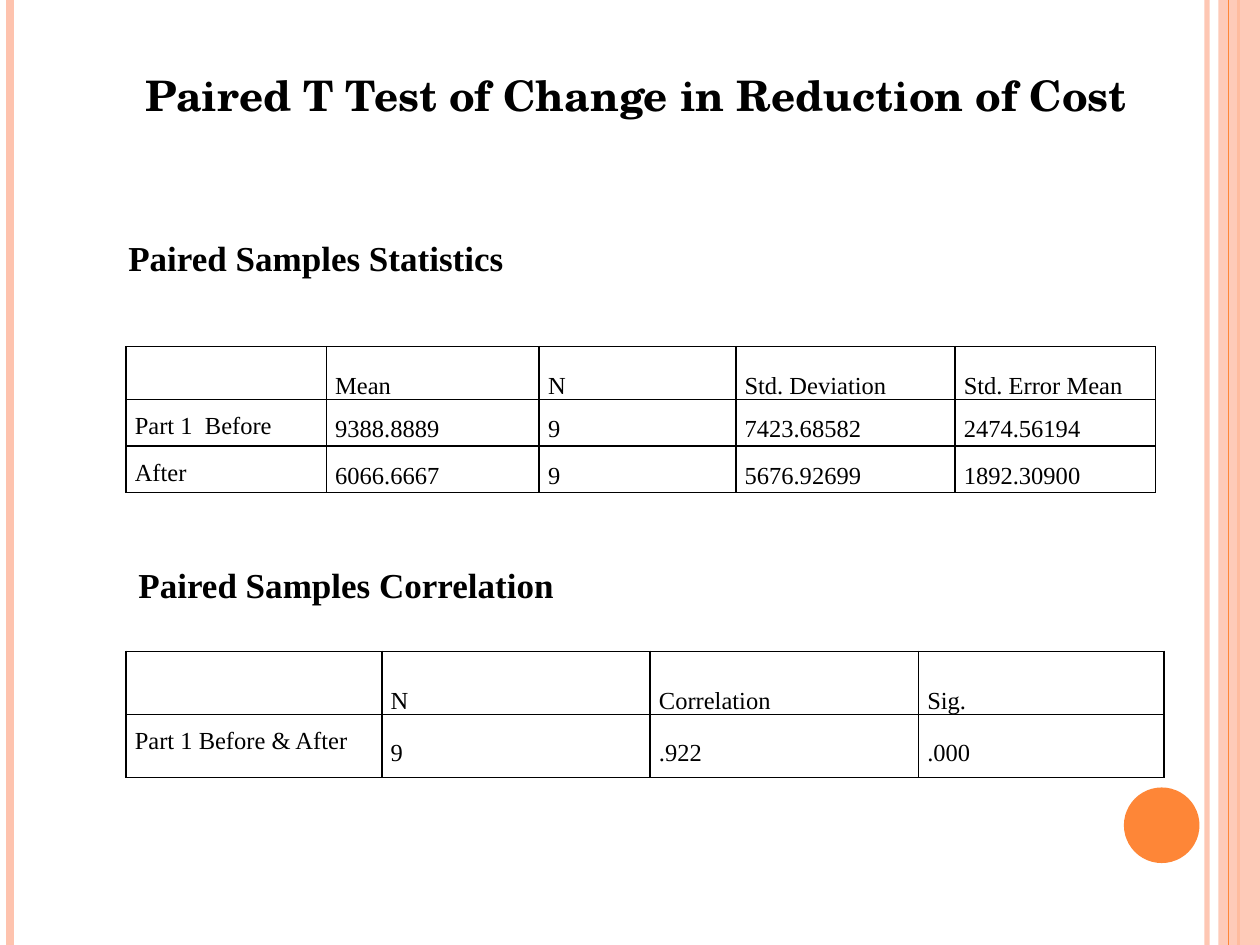
from typing import NamedTuple

from lxml.etree import SubElement
from pptx import Presentation
from pptx.dml.color import RGBColor
from pptx.enum.shapes import MSO_CONNECTOR, MSO_SHAPE
from pptx.enum.text import MSO_ANCHOR, MSO_AUTO_SIZE, PP_ALIGN
from pptx.oxml.ns import qn
from pptx.util import Inches, Pt

BLACK = RGBColor(0x00, 0x00, 0x00)
PEACH = RGBColor(0xFE, 0xC3, 0xAE)
ORANGE = RGBColor(0xFE, 0x86, 0x37)
SERIF = "Times New Roman"
PAGE_HEIGHT = 7.5


class Stripe(NamedTuple):
    x: float
    color: RGBColor
    weight: float
    opacity: int = 100


class Block(NamedTuple):
    shape: MSO_SHAPE
    box: tuple[float, float, float, float]
    color: RGBColor
    opacity: int = 100


class Heading(NamedTuple):
    text: str
    box: tuple[float, float, float, float]
    size: int = 20
    font: str = SERIF
    align: PP_ALIGN = PP_ALIGN.LEFT


class Grid(NamedTuple):
    left: float
    top: float
    widths: list[float]
    heights: list[float]
    rows: list[list[str]]


STRIPES_BEHIND = [
    Stripe(9.58, PEACH, 3, 93),
    Stripe(0.08, PEACH, 4.5),
    Stripe(9.83, ORANGE, 1.5),
]
SIDE_BAND = Block(MSO_SHAPE.RECTANGLE, (9.67, 0, 0.33, PAGE_HEIGHT), PEACH, 87)
STRIPE_ON_BAND = Stripe(9.75, ORANGE, 0.75)
CORNER_DISC = Block(MSO_SHAPE.OVAL, (8.92, 6.25, 0.6, 0.6), ORANGE)

HEADINGS = [
    Heading("Paired T Test of Change in Reduction of Cost", (0.67, 0.5, 8.75, 0.5),
            24, "TeX Gyre Schola", PP_ALIGN.CENTER),
    Heading("Paired Samples Statistics", (0.92, 1.83, 5, 0.44)),
    Heading("Paired Samples Correlation", (1, 4.42, 4.92, 0.44)),
]

GRIDS = [
    Grid(1, 2.75, [1.59, 1.69, 1.56, 1.74, 1.59], [0.42, 0.37, 0.37], [
        ["", "Mean", "N", "Std. Deviation", "Std. Error Mean"],
        ["Part 1  Before", "9388.8889", "9", "7423.68582", "2474.56194"],
        ["After", "6066.6667", "9", "5676.92699", "1892.30900"],
    ]),
    Grid(1, 5.17, [2.03, 2.13, 2.13, 1.95], [0.5, 0.5], [
        ["", "N", "Correlation", "Sig."],
        ["Part 1 Before & After", "9", ".922", ".000"],
    ]),
]


def apply_format(target, values: dict) -> None:
    for name, value in values.items():
        setattr(target, name, value)


def set_opacity(parent, percent: int) -> None:
    """Add an alpha value to the solid colour inside parent."""
    if percent < 100:
        color = next(parent.iter(qn("a:srgbClr")))
        SubElement(color, qn("a:alpha")).set("val", str(percent * 1000))


def draw_stripe(page, stripe: Stripe) -> None:
    x = Inches(stripe.x)
    line = page.shapes.add_connector(
        MSO_CONNECTOR.STRAIGHT, x, Inches(0), x, Inches(PAGE_HEIGHT))
    line.line.color.rgb = stripe.color
    line.line.width = Pt(stripe.weight)
    properties = line._element.spPr
    set_opacity(properties, stripe.opacity)
    SubElement(properties, qn("a:effectLst"))


def draw_block(page, block: Block) -> None:
    shape = page.shapes.add_shape(block.shape, *map(Inches, block.box))
    shape.shadow.inherit = False
    shape.fill.solid()
    shape.fill.fore_color.rgb = block.color
    shape.line.fill.background()
    set_opacity(shape._element.spPr, block.opacity)


def write_text(para, text: str, size: int, font: str, bold: bool) -> None:
    span = para.add_run()
    span.text = text
    apply_format(span.font, {"size": Pt(size), "name": font, "bold": bold})
    span.font.color.rgb = BLACK


def draw_heading(page, heading: Heading) -> None:
    box = page.shapes.add_textbox(*map(Inches, heading.box))
    apply_format(box.text_frame, {
        "word_wrap": True, "auto_size": MSO_AUTO_SIZE.SHAPE_TO_FIT_TEXT})
    para = box.text_frame.paragraphs[0]
    para.alignment = heading.align
    write_text(para, heading.text, heading.size, heading.font, True)


def add_borders(cell) -> None:
    properties = cell._tc.get_or_add_tcPr()
    for position, side in enumerate(("a:lnL", "a:lnR", "a:lnT", "a:lnB")):
        border = properties.makeelement(qn(side), {"w": str(Pt(1))})
        fill = SubElement(border, qn("a:solidFill"))
        SubElement(fill, qn("a:srgbClr")).set("val", str(BLACK))
        properties.insert(position, border)


def fill_cell(cell, text: str, row: int, column: int) -> None:
    if row == 0:
        anchor = MSO_ANCHOR.BOTTOM
    else:
        anchor = MSO_ANCHOR.TOP if column == 0 else MSO_ANCHOR.MIDDLE
    apply_format(cell, {
        "margin_left": Inches(0.07), "margin_right": Inches(0.07),
        "margin_top": 0, "margin_bottom": 0, "vertical_anchor": anchor})
    cell.fill.background()
    add_borders(cell)
    if text:
        para = cell.text_frame.paragraphs[0]
        apply_format(para, {"alignment": PP_ALIGN.JUSTIFY, "line_spacing": 1.5})
        if column == 0:
            para.space_after = Pt(15)
        write_text(para, text, 14, SERIF, False)


def draw_grid(page, grid: Grid) -> None:
    frame = page.shapes.add_table(
        len(grid.heights), len(grid.widths), Inches(grid.left), Inches(grid.top),
        Inches(sum(grid.widths)), Inches(sum(grid.heights)))
    table = frame.table
    apply_format(table, {"first_row": False, "horz_banding": False})
    for column, width in zip(table.columns, grid.widths):
        column.width = Inches(width)
    for row, height in zip(table.rows, grid.heights):
        row.height = Inches(height)
    for row, texts in enumerate(grid.rows):
        for column, text in enumerate(texts):
            fill_cell(table.cell(row, column), text, row, column)


def main() -> None:
    deck = Presentation()
    deck.slide_width, deck.slide_height = Inches(10), Inches(PAGE_HEIGHT)
    page = deck.slides.add_slide(deck.slide_layouts[6])

    # Side decoration, back to front
    for stripe in STRIPES_BEHIND:
        draw_stripe(page, stripe)
    draw_block(page, SIDE_BAND)
    draw_stripe(page, STRIPE_ON_BAND)
    draw_block(page, CORNER_DISC)

    # Title, section headings and their tables
    for heading in HEADINGS:
        draw_heading(page, heading)
    for grid in GRIDS:
        draw_grid(page, grid)

    deck.save("out.pptx")


if __name__ == "__main__":
    main()
